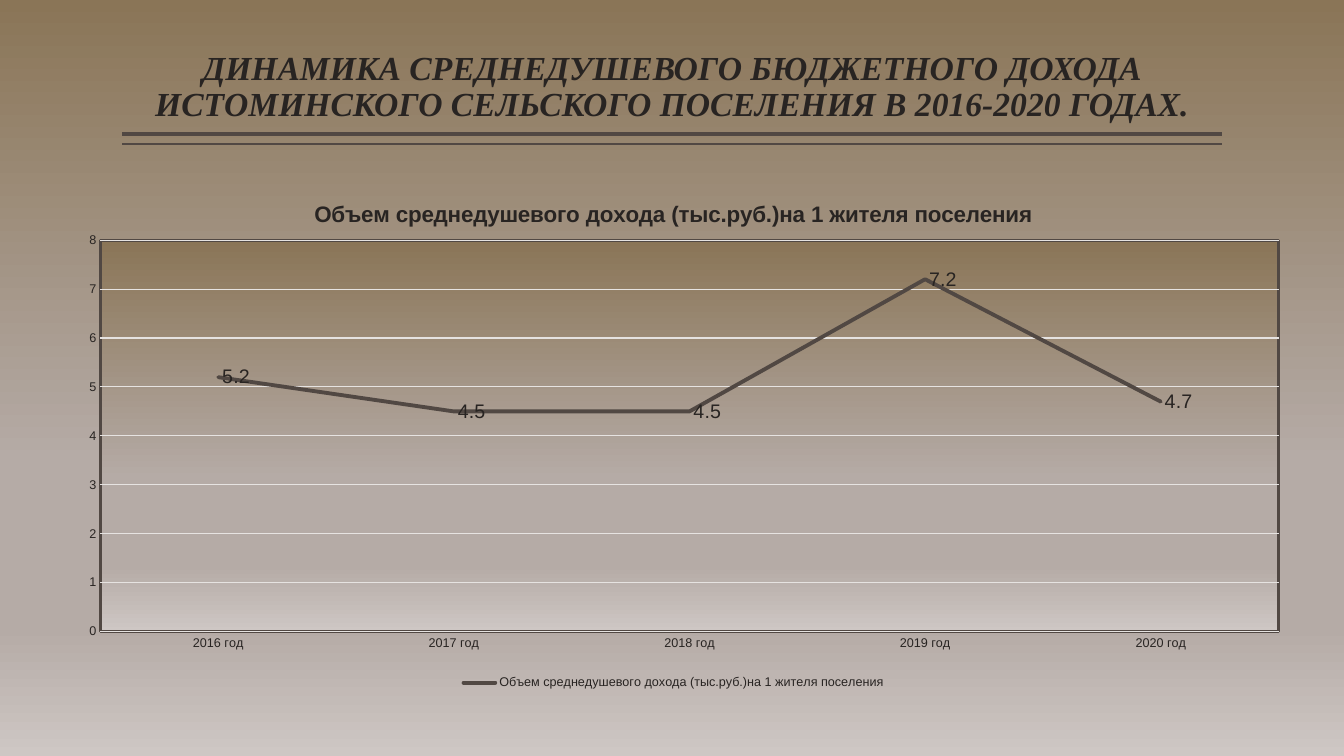
from pptx import Presentation
from pptx.chart.data import CategoryChartData
from pptx.dml.color import RGBColor
from pptx.enum.chart import (XL_CHART_TYPE, XL_LABEL_POSITION, XL_LEGEND_POSITION,
                             XL_MARKER_STYLE, XL_TICK_MARK)
from pptx.enum.shapes import MSO_CONNECTOR
from pptx.enum.text import MSO_ANCHOR, MSO_AUTO_SIZE, PP_ALIGN
from pptx.oxml import parse_xml
from pptx.oxml.ns import nsdecls, qn
from pptx.oxml.xmlchemy import OxmlElement
from pptx.util import Pt

EMU_PER_PX = 914400 / 100.8
COLORS = {"text": "282422", "line": "514843", "grid": "E6E3E1"}
GRADIENT = {0: "8A7557", 61: "B5ABA6", 83: "B5ABA6", 100: "CEC7C4"}
PLOT_LAYOUT = {"x": 0.036, "y": 0.117, "w": 0.954, "h": 0.762}
INCOME_NAME = "Объем среднедушевого дохода (тыс.руб.)на 1 жителя поселения"
INCOME = {2016: 5.2, 2017: 4.5, 2018: 4.5, 2019: 7.2, 2020: 4.7}


def px(length):
    return round(length * EMU_PER_PX)


def color(name):
    return RGBColor.from_string(COLORS[name])


def style_font(font, size, name="Arial", bold=False, italic=False):
    font.name, font.size, font.bold, font.italic = name, Pt(size), bold, italic
    font.color.rgb = color("text")


def style_line(line, name, width):
    line.color.rgb = color(name)
    line.width = Pt(width)


def gradient_fill():
    stops = "".join(f'<a:gs pos="{position * 1000}"><a:srgbClr val="{value}"/></a:gs>'
                    for position, value in GRADIENT.items())
    return parse_xml(f'<a:gradFill {nsdecls("a")} rotWithShape="1"><a:gsLst>{stops}</a:gsLst>'
                     '<a:lin ang="5400000" scaled="0"/></a:gradFill>')


def paint_background(slide):
    slide.background.fill.solid()
    properties = slide.element.find(".//" + qn("p:bgPr"))
    properties.replace(properties[0], gradient_fill())


def add_title(slide, left, top, width, height):
    title = slide.shapes.title
    title.left, title.top, title.width, title.height = map(px, (left, top, width, height))
    frame = title.text_frame
    frame.text = ("ДИНАМИКА СРЕДНЕДУШЕВОГО БЮДЖЕТНОГО ДОХОДА "
                  "ИСТОМИНСКОГО СЕЛЬСКОГО ПОСЕЛЕНИЯ В 2016-2020 ГОДАХ.")
    frame.word_wrap = True
    frame.auto_size = MSO_AUTO_SIZE.NONE
    frame.vertical_anchor = MSO_ANCHOR.BOTTOM
    frame.margin_left = frame.margin_right = 0
    frame.margin_top = frame.margin_bottom = px(5)
    paragraph = frame.paragraphs[0]
    paragraph.alignment = PP_ALIGN.CENTER
    paragraph.line_spacing = 0.9
    style_font(paragraph.runs[0].font, 24, "Times New Roman", True, True)
    for offset, weight in ((5, 3), (15, 1)):
        y = px(top + height + offset)
        rule = slide.shapes.add_connector(MSO_CONNECTOR.STRAIGHT, px(left + width), y, px(left), y)
        style_line(rule.line, "line", weight)
        rule.element.spPr.append(OxmlElement("a:effectLst"))


def format_plot_area(chart):
    plot_area = chart.element.find(".//" + qn("c:plotArea"))
    for layout in plot_area.findall(qn("c:layout")):
        plot_area.remove(layout)
    sizes = "".join(f'<c:{key} val="{value}"/>' for key, value in PLOT_LAYOUT.items())
    plot_area.insert(0, parse_xml(
        f'<c:layout {nsdecls("c")}><c:manualLayout><c:layoutTarget val="inner"/>'
        f'<c:xMode val="edge"/><c:yMode val="edge"/>{sizes}</c:manualLayout></c:layout>'))
    properties = parse_xml(
        f'<c:spPr {nsdecls("c", "a")}><a:ln w="{Pt(2)}"><a:solidFill>'
        f'<a:srgbClr val="{COLORS["line"]}"/></a:solidFill></a:ln></c:spPr>')
    properties.insert(0, gradient_fill())
    plot_area.append(properties)


def format_axes(chart):
    for axis in (chart.category_axis, chart.value_axis):
        axis.major_tick_mark = axis.minor_tick_mark = XL_TICK_MARK.NONE
        style_font(axis.tick_labels.font, 9)
    style_line(chart.category_axis.format.line, "grid", 1)
    value_axis = chart.value_axis
    value_axis.minimum_scale, value_axis.maximum_scale, value_axis.major_unit = 0, 8, 1
    value_axis.format.line.fill.background()
    style_line(value_axis.major_gridlines.format.line, "grid", 0.75)


def format_series(series):
    series.smooth = False
    series.marker.style = XL_MARKER_STYLE.NONE
    style_line(series.format.line, "line", 2.75)
    series.format.line.fill._xPr.set("cap", "rnd")
    labels = series.data_labels
    labels.show_value = True
    labels.position = XL_LABEL_POSITION.RIGHT
    style_font(labels.font, 14)


def add_income_chart(slide, left, top, width, height):
    data = CategoryChartData()
    data.categories = [f"{year} год" for year in INCOME]
    data.add_series(INCOME_NAME, INCOME.values())
    chart = slide.shapes.add_chart(XL_CHART_TYPE.LINE, *map(px, (left, top, width, height)), data).chart
    style_font(chart.font, 10)
    chart.has_title = True
    chart.chart_title.include_in_layout = False
    title = chart.chart_title.text_frame
    title.text = INCOME_NAME
    style_font(title.paragraphs[0].runs[0].font, 16, bold=True)
    chart.has_legend = True
    chart.legend.position = XL_LEGEND_POSITION.BOTTOM
    chart.legend.include_in_layout = False
    style_font(chart.legend.font, 9)
    chart.plots[0].vary_by_categories = False
    format_axes(chart)
    format_series(chart.plots[0].series[0])
    format_plot_area(chart)


def main():
    presentation = Presentation()
    presentation.slide_width, presentation.slide_height = px(1344), px(756)
    slide = presentation.slides.add_slide(presentation.slide_layouts[5])
    paint_background(slide)
    add_title(slide, 122, 8, 1100, 121)
    add_income_chart(slide, 56, 180, 1235, 514)
    presentation.save("out.pptx")


if __name__ == "__main__":
    main()
